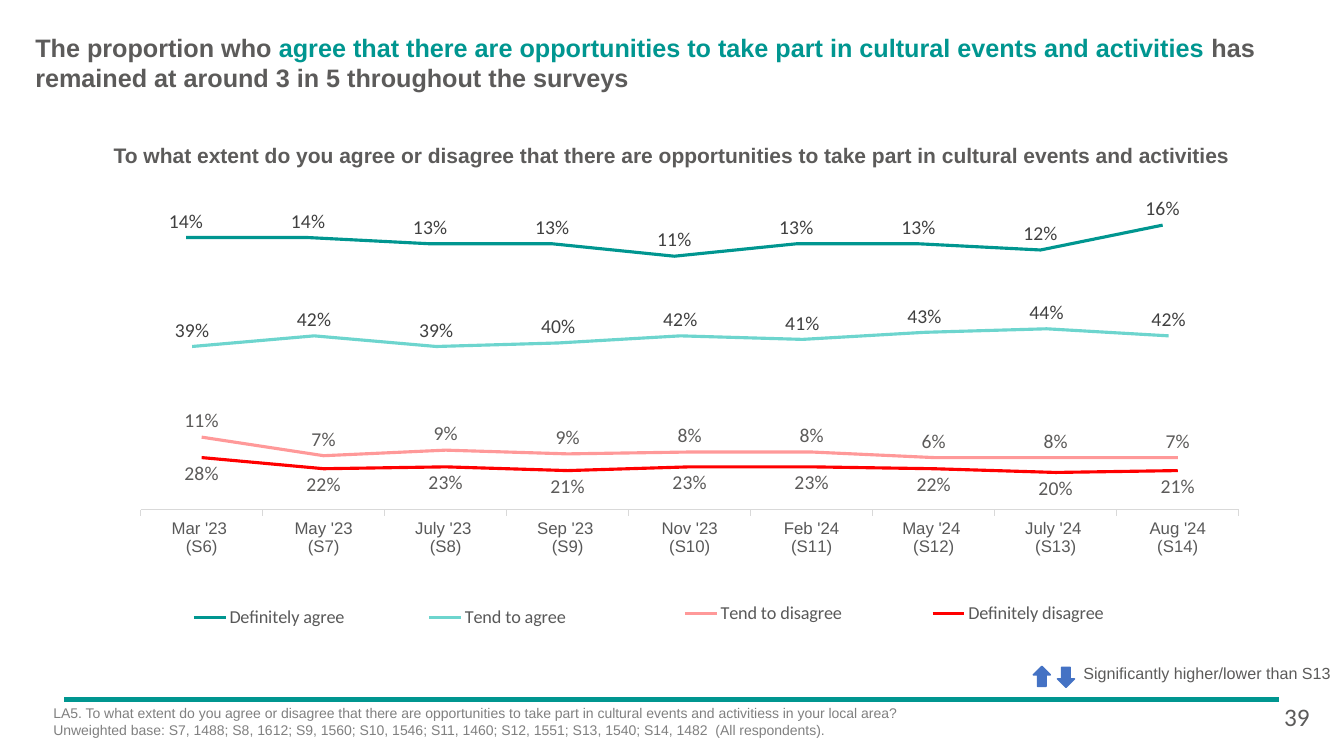
from lxml.etree import SubElement
from pptx import Presentation
from pptx.chart.data import CategoryChartData
from pptx.dml.color import RGBColor
from pptx.enum.chart import XL_CHART_TYPE, XL_LABEL_POSITION, XL_LEGEND_POSITION, XL_TICK_MARK
from pptx.enum.shapes import MSO_CONNECTOR, MSO_SHAPE
from pptx.enum.text import MSO_ANCHOR, PP_ALIGN
from pptx.oxml import parse_xml
from pptx.oxml.ns import nsdecls, qn
from pptx.util import Inches, Pt

COLUMNS, ROWS = 133.33, 75
GREY, TEAL, BLUE = "5C5B5A", "009690", "4472C4"
LABEL_GREY, AXIS_GREY = "404040", "595959"
ABOVE, BELOW = XL_LABEL_POSITION.ABOVE, XL_LABEL_POSITION.BELOW
WAVES = ["Mar '23 ", "May '23", "July '23 ", "Sep '23 ", "Nov '23",
         "Feb '24", "May '24 ", "July '24 ", "Aug '24"]
WAVE_LABELS = [f"{wave}\n(S{number})" for number, wave in enumerate(WAVES, 6)]
WAVE_NUMBERS = [str(number) for number in range(1, len(WAVES) + 1)]


def color(hex_string):
    return RGBColor.from_string(hex_string)


def grid(*cells):
    """Turn grid cells, a tenth of an inch each, into slide lengths."""
    return [Inches(cell / 10) for cell in cells]


def style_font(font, size, hex_string, name="Arial", bold=False):
    font.size, font.name, font.bold = Pt(size), name, bold
    font.color.rgb = color(hex_string)


def remove_layouts(element):
    for layout in element.findall(qn("c:layout")):
        element.remove(layout)


def manual_layout(box, frame, inner=False):
    """Place a box inside a chart frame, both given in grid cells."""
    layout = parse_xml(f"<c:layout {nsdecls('c')}><c:manualLayout/></c:layout>")
    shares = {"x": (box[0] - frame[0]) / frame[2], "y": (box[1] - frame[1]) / frame[3],
              "w": box[2] / frame[2], "h": box[3] / frame[3]}
    settings = {"layoutTarget": "inner"} if inner else {}
    settings.update(xMode="edge", yMode="edge")
    settings.update({key: f"{share:.4f}" for key, share in shares.items()})
    for key, value in settings.items():
        SubElement(layout[0], qn(f"c:{key}")).set("val", value)
    return layout


def clear_background():
    return parse_xml(f"<c:spPr {nsdecls('c', 'a')}><a:noFill/>"
                     "<a:ln><a:noFill/></a:ln></c:spPr>")


class SurveySlide:
    def __init__(self, presentation):
        self.slide = presentation.slides.add_slide(presentation.slide_layouts[5])
        self.shapes = self.slide.shapes

    def title(self, box, runs, size):
        title = self.shapes.title
        title.left, title.top, title.width, title.height = grid(*box)
        title.text_frame.vertical_anchor = MSO_ANCHOR.MIDDLE
        paragraph = title.text_frame.paragraphs[0]
        paragraph.alignment = PP_ALIGN.LEFT
        for text, hex_string in runs:
            run = paragraph.add_run()
            run.text = text
            style_font(run.font, size, hex_string, bold=True)

    def text(self, box, lines, size, hex_string=GREY, name="Arial", bold=False,
             alignment=PP_ALIGN.LEFT, wrap=True, parent=None):
        frame = (parent or self.shapes).add_textbox(*grid(*box)).text_frame
        frame.word_wrap = wrap
        frame.text = "\n".join(lines)
        for paragraph in frame.paragraphs:
            paragraph.alignment = alignment
            style_font(paragraph.font, size, hex_string, name, bold)

    def rule(self, start, end, hex_string, weight):
        line = self.shapes.add_connector(MSO_CONNECTOR.STRAIGHT, *grid(*start, *end))
        line.line.color.rgb = color(hex_string)
        line.line.width = Pt(weight)
        SubElement(line._element.spPr, qn("a:effectLst"))

    def arrow(self, box, rotation, parent):
        arrow = parent.add_shape(MSO_SHAPE.DOWN_ARROW, *grid(*box))
        arrow.rotation = rotation
        arrow.shadow.inherit = False
        arrow.fill.solid()
        arrow.fill.fore_color.rgb = color(BLUE)
        arrow.line.color.rgb = color(BLUE)
        arrow.line.width = Pt(1)

    def significance_key(self):
        shapes = self.shapes.add_group_shape().shapes
        self.arrow((102.5, 66.1, 1.7, 2), 180, shapes)
        self.text((106.5, 65.3, 26.7, 2.9), ["Significantly higher/lower than S13"],
                  11.5, wrap=False, parent=shapes)
        self.arrow((104.9, 66.2, 1.7, 2), 0, shapes)

    def line_chart(self, frame, plot_box, legend_box, categories, series_list,
                   minimum, maximum, label_color, show_axis=False):
        """Draw stacked lines; each series is (name, values, colour, label position)."""
        data = CategoryChartData(number_format="0%")
        data.categories = categories
        for name, values, *_ in series_list:
            data.add_series(name, [value / 100 for value in values])
        chart = self.shapes.add_chart(XL_CHART_TYPE.LINE_STACKED, *grid(*frame), data).chart
        chart.has_title = False
        style_font(chart.font, 10, "000000", "Calibri")

        for series, (_, values, hex_string, position) in zip(chart.plots[0].series, series_list):
            series.smooth = False
            series.format.line.color.rgb = color(hex_string)
            series.format.line.width = Pt(2.25)
            if values:
                labels = series.data_labels
                labels.show_value = True
                labels.number_format, labels.number_format_is_linked = "0%", False
                labels.position = position
                style_font(labels.font, 14, label_color, "Calibri")
        chart.plots[0].vary_by_categories = False

        values_axis, waves_axis = chart.value_axis, chart.category_axis
        values_axis.minimum_scale, values_axis.maximum_scale = minimum, maximum
        values_axis.has_major_gridlines = False
        values_axis.visible = False
        waves_axis.visible = show_axis
        if show_axis:
            waves_axis.major_tick_mark = XL_TICK_MARK.OUTSIDE
            waves_axis.format.line.color.rgb = color("D9D9D9")
            waves_axis.format.line.width = Pt(0.75)
            style_font(waves_axis.tick_labels.font, 12, AXIS_GREY)

        self.place_legend(chart, legend_box, frame, series_list)
        chart_part = chart._chartSpace.find(qn("c:chart"))
        chart_part.addnext(clear_background())
        plot_area = chart_part.find(qn("c:plotArea"))
        remove_layouts(plot_area)
        plot_area.insert(0, manual_layout(plot_box, frame, inner=True))
        plot_area.append(clear_background())

    def place_legend(self, chart, box, frame, series_list):
        """Place the legend and leave out the series that have no values."""
        chart.has_legend = True
        legend = chart.legend
        legend.position = XL_LEGEND_POSITION.LEFT
        legend.include_in_layout = False
        style_font(legend.font, 13, AXIS_GREY, "Calibri")
        remove_layouts(legend._element)
        previous = legend._element.find(qn("c:legendPos"))
        for index, (_, values, *_) in enumerate(series_list):
            if not values:
                entry = parse_xml(f'<c:legendEntry {nsdecls("c")}><c:idx val="{index}"/>'
                                  '<c:delete val="1"/></c:legendEntry>')
                previous.addnext(entry)
                previous = entry
        previous.addnext(manual_layout(box, frame))


def main():
    presentation = Presentation()
    presentation.slide_width, presentation.slide_height = grid(COLUMNS, ROWS)
    survey = SurveySlide(presentation)

    survey.rule((6.4, 69.4), (126.9, 69.4), TEAL, 3)
    survey.title((2.5, 2.7, 125.6, 7), [
        ("The proportion who ", GREY),
        ("agree that there are opportunities to take part in cultural events and activities ", TEAL),
        ("has remained at around 3 in 5 throughout the surveys", GREY)], 18)
    survey.text((7.1, 13.6, 119.1, 3.5), [
        "To what extent do you agree or disagree that there are opportunities "
        "to take part in cultural events and activities"],
        15, bold=True, alignment=PP_ALIGN.CENTER)

    survey.line_chart(
        (11.9, 16.3, 109.6, 50.1), (12.4, 16.8, 109, 15.4), (17.1, 59.8, 19.2, 3),
        WAVE_NUMBERS,
        [("Definitely agree", [14, 14, 13, 13, 11, 13, 13, 12, 16], TEAL, ABOVE)],
        0, 0.25, LABEL_GREY)
    survey.line_chart(
        (12.4, 24.2, 109.6, 45.8), (13, 27, 109, 24.6), (40.5, 59.8, 17.7, 3),
        WAVE_NUMBERS,
        [("Tend to agree", [39, 42, 39, 40, 42, 41, 43, 44, 42], "6DD5CE", ABOVE),
         ("Definitely agree", [], "70AD47", ABOVE)],
        -0.1, 0.6, LABEL_GREY)
    survey.line_chart(
        (13.9, 36.2, 109.6, 38.8), (13.9, 39.5, 109, 12.9), (59.5, 59.4, 58.4, 3),
        WAVE_LABELS,
        [("Definitely disagree", [28, 22, 23, 21, 23, 23, 22, 20, 21], "FF0000", BELOW),
         ("Tend to disagree", [11, 7, 9, 9, 8, 8, 6, 8, 7], "FF9999", ABOVE),
         ("Tend to agree", [], "A5A5A5", ABOVE),
         ("Definitely agree", [], "ED7D31", ABOVE)],
        -0.1, 0.6, GREY, show_axis=True)

    survey.significance_key()
    survey.text((4.3, 69.4, 122.1, 5.6), [
        "LA5. To what extent do you agree or disagree that there are opportunities "
        "to take part in cultural events and activitiess in your local area?",
        "Unweighted base: S7, 1488; S8, 1612; S9, 1560; S10, 1546; S11, 1460; "
        "S12, 1551; S13, 1540; S14, 1482  (All respondents)."], 10, "808080")
    survey.text((126.4, 69.1, 5.3, 4), ["39"], 18, name="Calibri")
    presentation.save("out.pptx")


if __name__ == "__main__":
    main()
